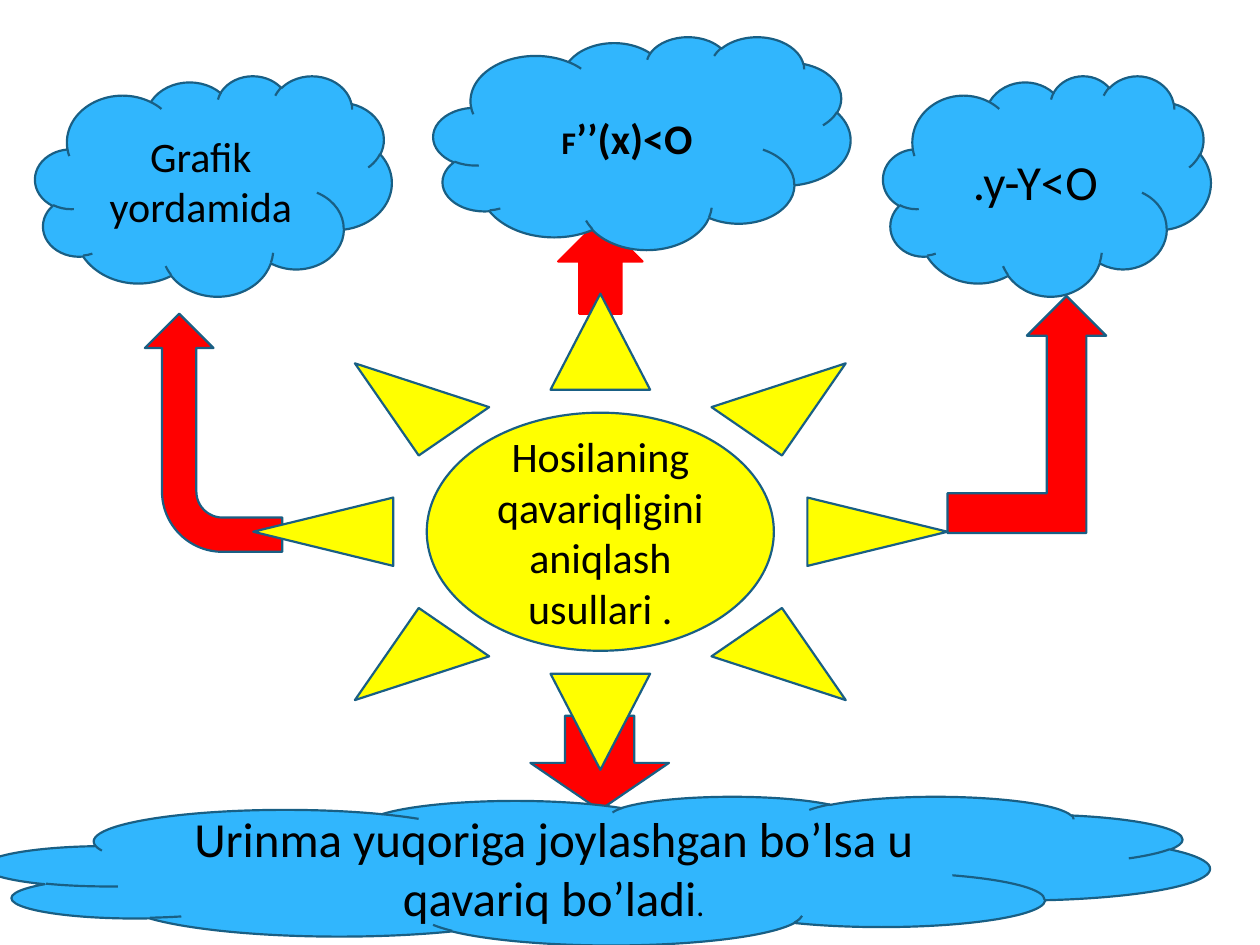
"""Build a slide of a sun whose arrows lead to four clouds."""
from dataclasses import dataclass

from pptx import Presentation
from pptx.dml.color import RGBColor
from pptx.enum.shapes import MSO_SHAPE
from pptx.enum.text import MSO_ANCHOR, PP_ALIGN
from pptx.util import Inches, Pt

CLOUD, SUN = MSO_SHAPE.CLOUD, MSO_SHAPE.SUN
UP, DOWN = MSO_SHAPE.UP_ARROW, MSO_SHAPE.DOWN_ARROW
BENT, BENT_UP = MSO_SHAPE.BENT_ARROW, MSO_SHAPE.BENT_UP_ARROW
MIDDLE, CENTER = MSO_ANCHOR.MIDDLE, PP_ALIGN.CENTER
WIDE, HIGH = Inches(10), Inches(7.5)
BLANK = 6


@dataclass(frozen=True)
class Theme:
    """Hold the colours, font and sizes of the slide."""
    red: str = "FF0000"
    blue: str = "31B6FD"
    yellow: str = "FFFF00"
    edge: str = "195F84"
    ink: str = "000000"
    font: str = "Calibri"
    small: int = 18
    body: int = 24
    large: int = 28
    stroke: float = 1.25


THEME = Theme()


@dataclass(frozen=True)
class Box:
    """Place a box in percent of the slide's width and height."""
    left: float
    top: float
    width: float
    height: float


@dataclass(frozen=True)
class Run:
    """Describe a stretch of text."""
    text: str
    size: int
    bold: bool = False


@dataclass(frozen=True)
class Figure:
    """Describe one filled shape and its words."""
    kind: MSO_SHAPE
    box: Box
    fill: str
    runs: tuple[Run, ...] = ()
    edge: str = THEME.edge
    turn: int = 0
    bends: tuple[float, ...] = ()


FIGURES = (
    Figure(BENT_UP, Box(75.2, 31.33, 12.6, 25.07), THEME.red),
    Figure(BENT, Box(7.5, 38.53, 18.9, 14.53), THEME.red, turn=270,
           bends=(0.25, 0.25, 0.25, 0.44)),
    Figure(UP, Box(44.3, 23.2, 6.7, 10), THEME.red, edge=THEME.red),
    Figure(DOWN, Box(42.1, 75.73, 11, 10), THEME.red),
    Figure(CLOUD, Box(70.1, 8, 26, 23.33), THEME.blue,
           (Run(".y-Y<O", THEME.large),)),
    Figure(CLOUD, Box(34.4, 3.87, 33.1, 22.53), THEME.blue,
           (Run("F", THEME.small, True), Run("’’(x)<O", THEME.body, True))),
    Figure(CLOUD, Box(2.8, 8, 28.3, 23.33), THEME.blue,
           (Run("Grafik yordamida", THEME.body),)),
    Figure(CLOUD, Box(-1.2, 84.27, 97.2, 15.73), THEME.blue,
           (Run("Urinma yuqoriga joylashgan bo’lsa u qavariq bo’ladi",
                THEME.large), Run(".", THEME.small))),
    Figure(SUN, Box(20.1, 31.07, 55.1, 50.4), THEME.yellow,
           (Run("Hosilaning qavariqligini aniqlash usullari .",
                THEME.body),)),
)


def write(frame, runs: tuple[Run, ...]) -> None:
    """Write the runs as one centred paragraph."""
    frame.word_wrap = True
    frame.vertical_anchor = MIDDLE
    para = frame.paragraphs[0]
    para.alignment = CENTER
    for run in runs:
        part = para.add_run()
        part.text = run.text
        looks = {"name": THEME.font, "size": Pt(run.size), "bold": run.bold}
        for name, value in looks.items():
            setattr(part.font, name, value)
        part.font.color.rgb = RGBColor.from_string(THEME.ink)


def draw(slide, figure: Figure) -> None:
    """Draw one figure on the slide."""
    box = figure.box
    shape = slide.shapes.add_shape(
        figure.kind,
        round(WIDE * box.left / 100), round(HIGH * box.top / 100),
        round(WIDE * box.width / 100), round(HIGH * box.height / 100))
    shape.shadow.inherit = False
    shape.rotation = figure.turn
    for place, bend in enumerate(figure.bends):
        shape.adjustments[place] = bend
    shape.fill.solid()
    shape.fill.fore_color.rgb = RGBColor.from_string(figure.fill)
    shape.line.color.rgb = RGBColor.from_string(figure.edge)
    shape.line.width = Pt(THEME.stroke)
    if figure.runs:
        write(shape.text_frame, figure.runs)


def main() -> None:
    """Build and save the deck."""
    deck = Presentation()
    deck.slide_width, deck.slide_height = WIDE, HIGH
    slide = deck.slides.add_slide(deck.slide_layouts[BLANK])
    for figure in FIGURES:
        draw(slide, figure)
    deck.save("out.pptx")


if __name__ == "__main__":
    main()
